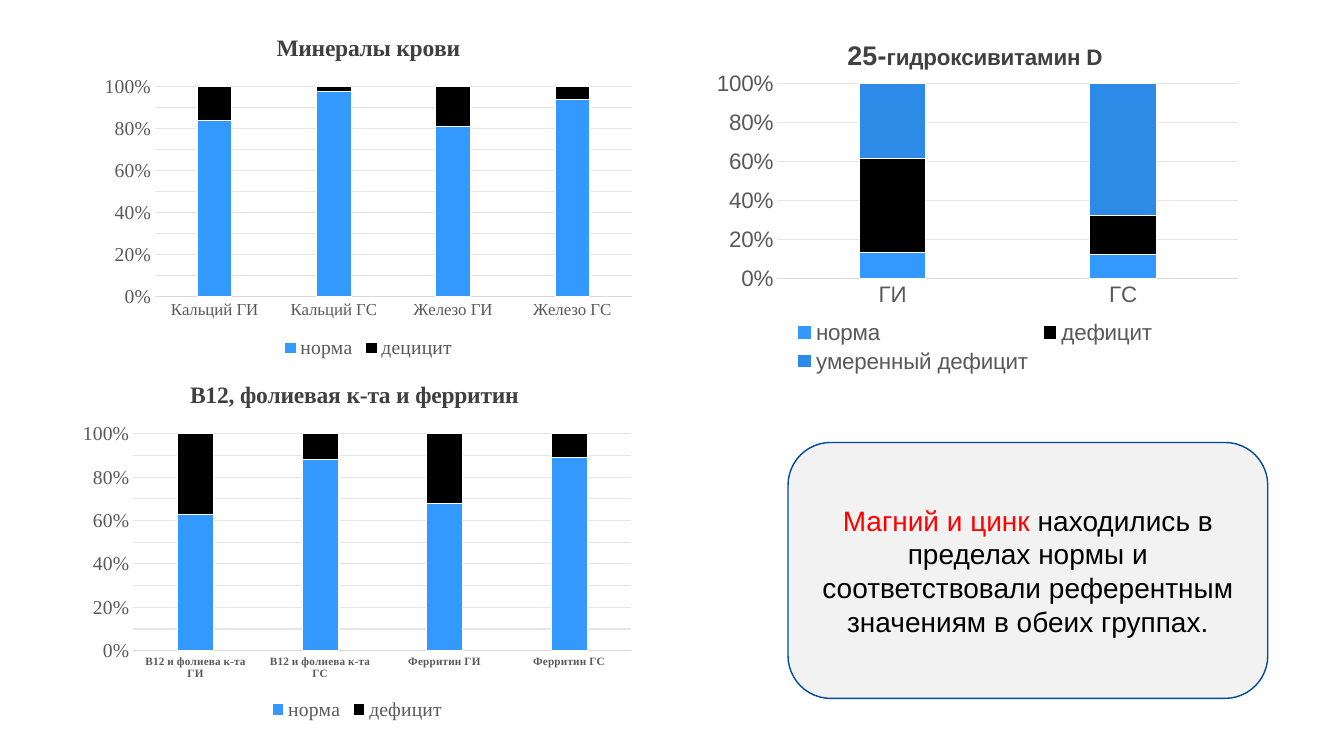
from dataclasses import dataclass
from typing import Optional

from lxml import etree
from pptx import Presentation
from pptx import util as u
from pptx.chart.data import CategoryChartData
from pptx.dml.color import RGBColor
from pptx.enum import chart as charts, shapes, text
from pptx.oxml import ns

BLUE, BLACK, DEEP_BLUE = "3399FF", "000000", "2D8AE7"
GREY, DARK_GREY = "595959", "404040"
SERIF, SANS = "Times New Roman", "Arial"


@dataclass
class Series:
    name: str
    values: tuple[int, ...]
    colour: str


@dataclass
class Panel:
    frame: tuple[float, float, float, float]  # left, top, width, height in cm
    title: list[tuple[str, float]]  # pieces of the title with their sizes
    categories: list[str]
    series: list[Series]
    font: str = SERIF
    size: float = 14
    category_size: float = 12
    category_bold: bool = False
    plot: Optional[tuple[float, float, float, float]] = None  # chart fractions


PANELS = [
    Panel(
        (17.65, 0.58, 13.84, 8.94),
        [("25-", 19.2), ("гидроксивитамин D", 16)],
        ["ГИ", "ГС"],
        [
            Series("норма", (13, 12), BLUE),
            Series("дефицит", (48, 20), BLACK),
            Series("умеренный дефицит", (38, 68), DEEP_BLUE),
        ],
        font=SANS, size=16, category_size=16, plot=(0.14, 0.17, 0.84, 0.55),
    ),
    Panel(
        (2.36, 0.41, 13.84, 8.74),
        [("Минералы крови", 16.8)],
        ["Кальций ГИ", "Кальций ГС", "Железо ГИ", "Железо ГС"],
        [
            Series("норма", (84, 98, 82, 94), BLUE),
            Series("децицит", (16, 2, 19, 6), BLACK),
        ],
    ),
    Panel(
        (1.8, 9.14, 14.4, 9.12),
        [("В12, фолиевая к-та и ферритин ", 16.8)],
        ["В12 и фолиева к-та ГИ", "В12 и фолиева к-та ГС",
         "Ферритин ГИ", "Ферритин ГС"],
        [
            Series("норма", (63, 88, 68, 90), BLUE),
            Series("дефицит", (37, 12, 32, 11), BLACK),
        ],
        category_size=8, category_bold=True,
    ),
]


def rgb(colour: str) -> RGBColor:
    return RGBColor.from_string(colour)


def style_font(font, name: str, size: float, colour: str, bold: bool = False) -> None:
    font.name, font.size, font.bold = name, u.Pt(size), bold
    font.color.rgb = rgb(colour)


def style_line(line, colour: str, width: float = 0.75) -> None:
    line.color.rgb = rgb(colour)
    line.width = u.Pt(width)


def place_plot(chart, plot: tuple[float, float, float, float]) -> None:
    """Fix the inner plot area at the given fractions of the chart."""
    area = chart.element.find(".//" + ns.qn("c:plotArea"))
    layout = area.find(ns.qn("c:layout"))
    if layout is None:
        layout = etree.Element(ns.qn("c:layout"))
        area.insert(0, layout)
    manual = etree.SubElement(layout, ns.qn("c:manualLayout"))
    settings = [("layoutTarget", "inner"), ("xMode", "edge"), ("yMode", "edge")]
    settings += [(key, str(value)) for key, value in zip("xywh", plot)]
    for key, value in settings:
        etree.SubElement(manual, ns.qn("c:" + key)).set("val", value)


def add_panel(page, panel: Panel) -> None:
    data = CategoryChartData()
    data.categories = panel.categories
    for series in panel.series:
        data.add_series(series.name, series.values)
    chart = page.shapes.add_chart(
        charts.XL_CHART_TYPE.COLUMN_STACKED_100, *map(u.Cm, panel.frame), data
    ).chart
    style_font(chart.font, panel.font, panel.size, BLACK)

    # Title
    chart.has_title = True
    para = chart.chart_title.text_frame.paragraphs[0]
    for words, size in panel.title:
        span = para.add_run()
        span.text = words
        style_font(span.font, panel.font, size, DARK_GREY, bold=True)
    chart.chart_title.include_in_layout = False

    # Legend
    chart.has_legend = True
    chart.legend.position = charts.XL_LEGEND_POSITION.BOTTOM
    chart.legend.include_in_layout = False
    style_font(chart.legend.font, panel.font, panel.size, GREY)

    # Axes
    category, value = chart.category_axis, chart.value_axis
    for axis in (category, value):
        axis.major_tick_mark = axis.minor_tick_mark = charts.XL_TICK_MARK.NONE
    style_font(category.tick_labels.font, panel.font, panel.category_size,
               GREY, panel.category_bold)
    style_line(category.format.line, "D9D9D9")
    style_font(value.tick_labels.font, panel.font, panel.size, GREY)
    value.tick_labels.number_format = "0%"
    value.tick_labels.number_format_is_linked = False
    value.format.line.fill.background()
    value.has_major_gridlines = True
    style_line(value.major_gridlines.format.line, "E6E6E6")

    # Columns
    columns = chart.plots[0]
    columns.gap_width, columns.overlap = 246, 100
    columns.vary_by_categories = False
    for drawn, series in zip(columns.series, panel.series):
        drawn.format.fill.solid()
        drawn.format.fill.fore_color.rgb = rgb(series.colour)
        style_line(drawn.format.line, "FFFFFF")
    if panel.plot:
        place_plot(chart, panel.plot)


def add_conclusion(page) -> None:
    box = page.shapes.add_shape(
        shapes.MSO_SHAPE.ROUNDED_RECTANGLE, *map(u.Cm, (19.86, 11.15, 12.09, 6.45))
    )
    box.shadow.inherit = False
    box.fill.solid()
    box.fill.fore_color.rgb = rgb("F2F2F2")
    style_line(box.line, "004C99", 1)
    frame = box.text_frame
    frame.word_wrap = True
    frame.vertical_anchor = text.MSO_ANCHOR.MIDDLE
    para = frame.paragraphs[0]
    para.alignment = text.PP_ALIGN.CENTER
    for words, colour in (
        ("Магний и цинк ", "FF0000"),
        ("находились в пределах нормы и соответствовали референтным "
         "значениям в обеих группах.", BLACK),
    ):
        span = para.add_run()
        span.text = words
        style_font(span.font, SANS, 20, colour)


def main() -> None:
    deck = Presentation()
    deck.slide_width, deck.slide_height = u.Cm(33.87), u.Cm(19.05)
    page = deck.slides.add_slide(deck.slide_layouts[6])
    for panel in PANELS:
        add_panel(page, panel)
    add_conclusion(page)
    deck.save("out.pptx")


if __name__ == "__main__":
    main()
